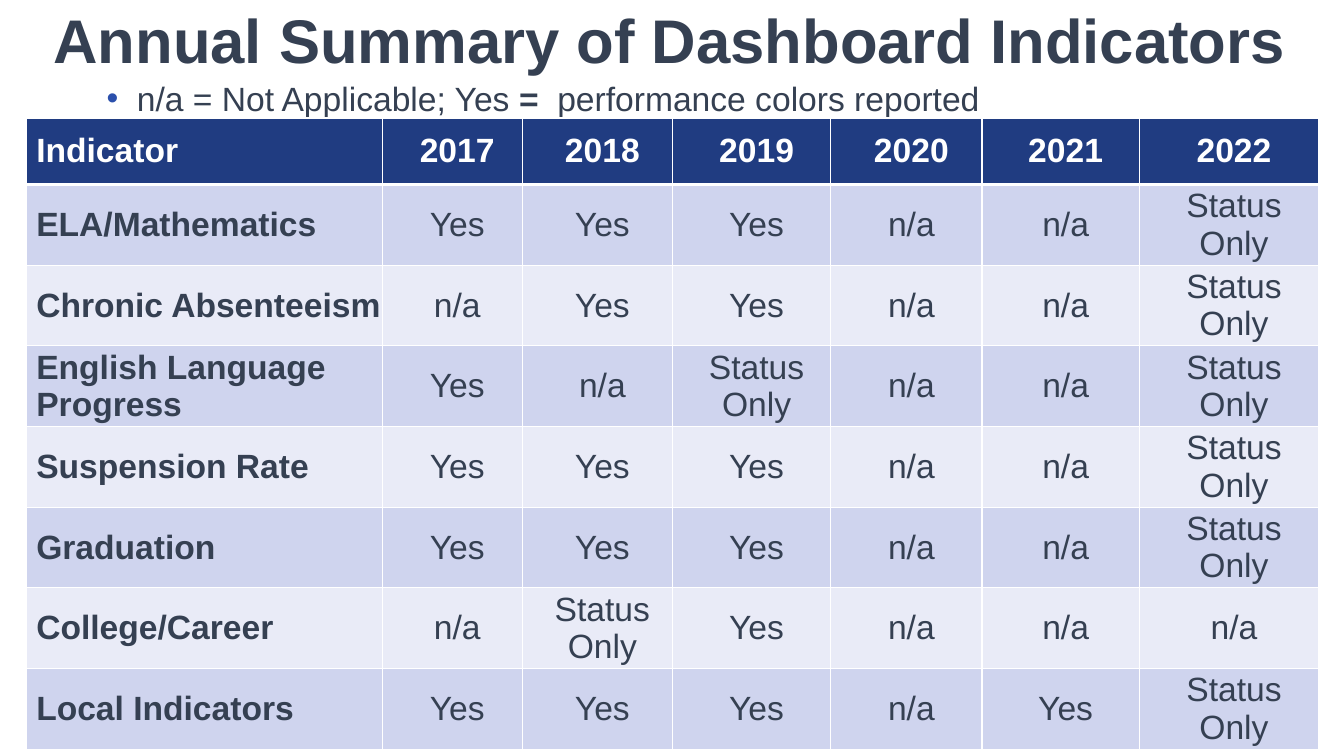
from lxml import etree
from pptx import Presentation
from pptx.dml.color import RGBColor
from pptx.enum.text import MSO_ANCHOR, PP_ALIGN
from pptx.oxml.ns import qn
from pptx.util import Inches, Pt

LEFT, CENTER = PP_ALIGN.LEFT, PP_ALIGN.CENTER
MIDDLE = MSO_ANCHOR.MIDDLE
TITLE_ONLY = 5
COLORS = {"text": "354052", "header": "203C81", "odd": "CFD4EE",
          "even": "E9EBF7", "bullet": "2B50AC", "white": "FFFFFF"}

YEARS = ["2017", "2018", "2019", "2020", "2021", "2022"]
Y, N, S = "Yes", "n/a", "Status\nOnly"
INDICATORS = {
    "ELA/Mathematics": [Y, Y, Y, N, N, S],
    "Chronic Absenteeism": [N, Y, Y, N, N, S],
    "English Language Progress": [Y, N, S, N, N, S],
    "Suspension Rate": [Y, Y, Y, N, N, S],
    "Graduation": [Y, Y, Y, N, N, S],
    "College/Career": [N, S, Y, N, N, N],
    "Local Indicators": [Y, Y, Y, N, Y, S],
}
COLUMN_WIDTHS = [3.53, 1.39, 1.49, 1.57, 1.5, 1.56, 1.78]
ROW_HEIGHTS = [0.66, 0.77, 0.77, 0.77, 0.57, 0.77, 0.77, 0.77]


def rgb(name):
    """Return the named palette colour."""
    return RGBColor.from_string(COLORS[name])


def set_all(target, values):
    """Set each attribute in values on the target."""
    for key, value in values.items():
        setattr(target, key, value)


def style_font(font, color="text", size=24, bold=False):
    """Apply the slide's typeface with a colour, size and weight."""
    set_all(font, {"name": "Arial", "size": Pt(size), "bold": bold})
    font.color.rgb = rgb(color)


def add_title(slide, text):
    """Place and format the title placeholder."""
    title = slide.shapes.title
    set_all(title, {"left": Inches(0.43), "top": Inches(0.02),
                    "width": Inches(12.47), "height": Inches(0.73)})
    frame = title.text_frame
    set_all(frame, {"text": text, "vertical_anchor": MIDDLE, "word_wrap": True})
    heading = frame.paragraphs[0]
    heading.alignment = LEFT
    style_font(heading.runs[0].font, size=44, bold=True)


def add_bullet(paragraph):
    """Give a paragraph a hanging coloured bullet."""
    props = paragraph._p.get_or_add_pPr()
    props.set("marL", str(Inches(0.4)))
    props.set("indent", str(Inches(-0.3)))
    bullet_color = etree.SubElement(props, qn("a:buClr"))
    etree.SubElement(bullet_color, qn("a:srgbClr"), val=COLORS["bullet"])
    etree.SubElement(props, qn("a:buFont"), typeface="Arial")
    etree.SubElement(props, qn("a:buChar"), char="•")


def add_legend(slide, runs):
    """Add the bulleted legend line from (text, bold) pairs."""
    box = slide.shapes.add_textbox(Inches(0.86), Inches(0.69), Inches(11.87), Inches(0.44))
    set_all(box.text_frame, {"word_wrap": True, "margin_top": Inches(0.08)})
    legend = box.text_frame.paragraphs[0]
    add_bullet(legend)
    for text, bold in runs:
        run = legend.add_run()
        run.text = text
        style_font(run.font, bold=bold)


def add_borders(cell, bottom):
    """Draw white cell borders with the given bottom width in points."""
    props = cell._tc.get_or_add_tcPr()
    widths = {"a:lnL": 1, "a:lnR": 1, "a:lnT": 1, "a:lnB": bottom}
    for tag, width in widths.items():
        line = etree.SubElement(props, qn(tag), w=str(Pt(width)))
        fill = etree.SubElement(line, qn("a:solidFill"))
        etree.SubElement(fill, qn("a:srgbClr"), val=COLORS["white"])


def fill_cell(cell, text, row, column):
    """Write and format one table cell by its place in the table."""
    is_header = row == 0
    add_borders(cell, bottom=3 if is_header else 1)
    band = "header" if is_header else "odd" if row % 2 else "even"
    cell.fill.solid()
    cell.fill.fore_color.rgb = rgb(band)
    set_all(cell, {"text": text, "vertical_anchor": MIDDLE, "margin_left": Inches(0.1),
                   "margin_right": 0, "margin_top": 0, "margin_bottom": 0})
    for paragraph in cell.text_frame.paragraphs:
        paragraph.alignment = CENTER if column else LEFT
        for run in paragraph.runs:
            style_font(run.font, "white" if is_header else "text",
                       bold=is_header or column == 0)


def add_indicator_table(slide):
    """Add the table of indicators by year."""
    rows = [["Indicator", *YEARS]]
    rows += [[name, *values] for name, values in INDICATORS.items()]
    table = slide.shapes.add_table(
        len(rows), len(COLUMN_WIDTHS), Inches(0.26), Inches(1.17),
        Inches(sum(COLUMN_WIDTHS)), Inches(sum(ROW_HEIGHTS))).table
    for column, width in zip(table.columns, COLUMN_WIDTHS):
        column.width = Inches(width)
    for table_row, height in zip(table.rows, ROW_HEIGHTS):
        table_row.height = Inches(height)
    for row, texts in enumerate(rows):
        for column, text in enumerate(texts):
            fill_cell(table.cell(row, column), text, row, column)


def main():
    """Build and save the slide."""
    deck = Presentation()
    set_all(deck, {"slide_width": Inches(13.33), "slide_height": Inches(7.5)})
    slide = deck.slides.add_slide(deck.slide_layouts[TITLE_ONLY])
    add_title(slide, "Annual Summary of Dashboard Indicators")
    add_legend(slide, [("n/a = Not Applicable; Yes", False), (" =  ", True),
                       ("performance colors reported", False)])
    add_indicator_table(slide)
    deck.save("out.pptx")


if __name__ == "__main__":
    main()
